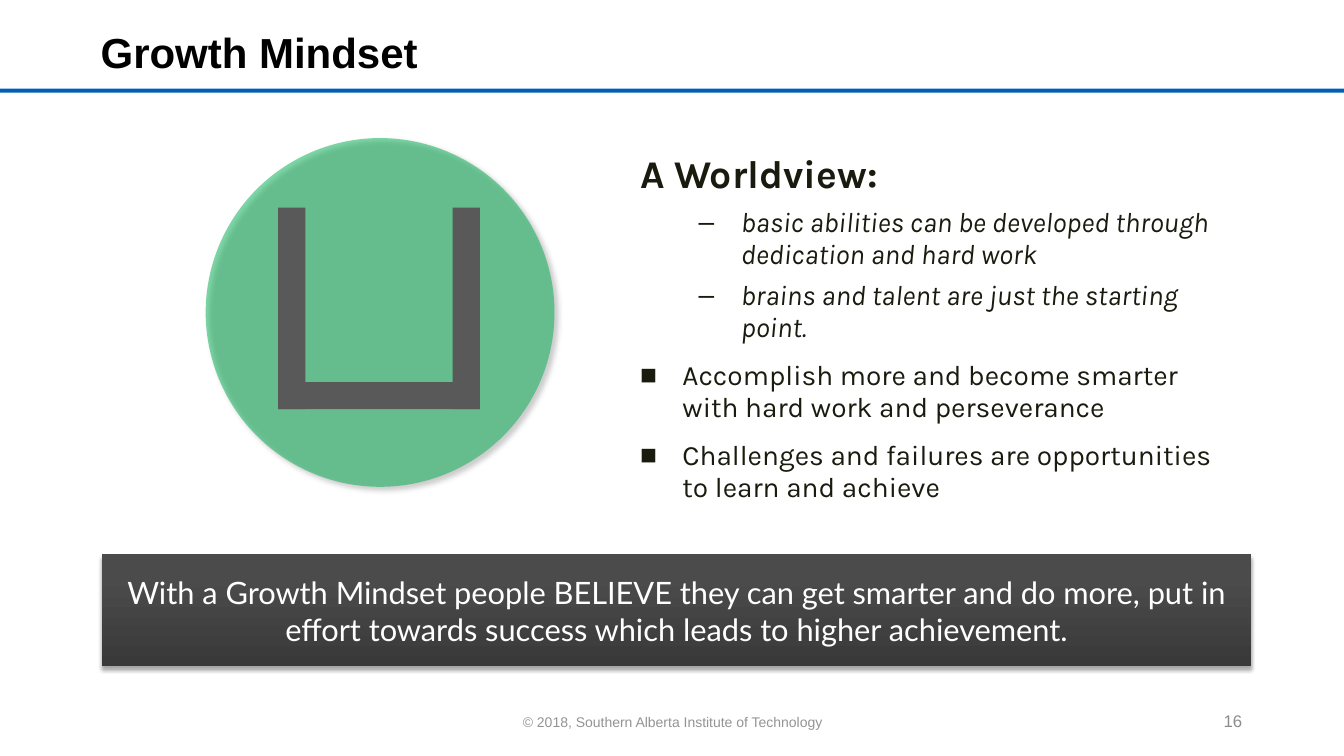
from lxml.etree import SubElement
from pptx import Presentation
from pptx.dml.color import RGBColor
from pptx.enum.shapes import MSO_SHAPE as Shape
from pptx.enum.text import MSO_ANCHOR as Anchor, PP_ALIGN as Align
from pptx.oxml.ns import qn
from pptx.util import Inches, Pt

BLACK = RGBColor(0x00, 0x00, 0x00)
WHITE = RGBColor(0xFF, 0xFF, 0xFF)
RULE_BLUE = RGBColor(0x00, 0x5E, 0xB8)
GREEN = RGBColor(0x00, 0xB0, 0x50)
INK = RGBColor(0x19, 0x1B, 0x0E)
BAR_GRAY = RGBColor(0x59, 0x59, 0x59)
BANNER_DARK = RGBColor(0x39, 0x39, 0x39)
BANNER_LIGHT = RGBColor(0x4B, 0x4B, 0x4B)
FOOTER_GRAY = RGBColor(0x94, 0x94, 0x94)
NUMBER_GRAY = RGBColor(0x8C, 0x8C, 0x8C)

INDENT = 0.42
# text, size, bold, italic, left margin, bullet, space before
WORLDVIEW = [
    ("A Worldview:", 28, True, False, 0, None, 0),
    ("basic abilities can be developed through dedication and hard work",
     20, False, True, 1, "–", 5),
    ("brains and talent are just the starting point.",
     20, False, True, 1, "–", 5),
    ("Accomplish more and become smarter with hard work and perseverance",
     20, False, False, INDENT, "■", 10),
    ("Challenges and failures are opportunities to learn and achieve",
     20, False, False, INDENT, "■", 10),
]


def set_font(paragraph, name, size, color, bold=False, italic=False):
    font = paragraph.font
    font.name, font.size = name, Pt(size)
    font.bold, font.italic = bold, italic
    font.color.rgb = color


def add_plain_shape(slide, kind, left, top, width, height, color=None):
    shape = slide.shapes.add_shape(
        kind, Inches(left), Inches(top), Inches(width), Inches(height))
    shape.shadow.inherit = False
    shape.line.fill.background()
    if color is not None:
        shape.fill.solid()
        shape.fill.fore_color.rgb = color
    return shape


def add_shadow(shape, opacity, blur, distance, angle):
    effects = shape._element.spPr.find(qn("a:effectLst"))
    shadow = SubElement(
        effects, qn("a:outerShdw"), blurRad=str(Pt(blur)),
        dist=str(Pt(distance)), dir=str(angle * 60000), rotWithShape="0")
    color = SubElement(shadow, qn("a:srgbClr"), val="000000")
    SubElement(color, qn("a:alpha"), val=str(opacity * 1000))


def add_text(slide, left, top, width, height, anchor=Anchor.TOP):
    box = slide.shapes.add_textbox(
        Inches(left), Inches(top), Inches(width), Inches(height))
    box.text_frame.word_wrap = True
    box.text_frame.vertical_anchor = anchor
    return box.text_frame


def add_line_of_text(slide, box, text, size, color, align, anchor, bold=False):
    paragraph = add_text(slide, *box, anchor).paragraphs[0]
    paragraph.text, paragraph.alignment = text, align
    set_font(paragraph, "Arial", size, color, bold)


def add_header(slide, left, top, width, height):
    add_plain_shape(slide, Shape.RECTANGLE, left, top + 0.88, width, 0.04,
                    RULE_BLUE)
    add_line_of_text(slide, (left + 0.9, top + 0.17, 9.77, height - 0.23),
                     "Growth Mindset", 30, BLACK, Align.LEFT, Anchor.MIDDLE,
                     bold=True)


def add_footer(slide, left, top, width, height):
    add_line_of_text(slide, (left, top + 0.08, 4.48, 0.27),
                     "© 2018, Southern Alberta Institute of Technology",
                     10, FOOTER_GRAY, Align.CENTER, Anchor.TOP)
    add_line_of_text(slide, (left + width - 3, top, 3, height),
                     "16", 12, NUMBER_GRAY, Align.RIGHT, Anchor.MIDDLE)


def add_open_container(slide, left, top, size):
    # Translucent disc
    disc = add_plain_shape(slide, Shape.OVAL, left, top, size, size, GREEN)
    color = disc._element.spPr.find(qn("a:solidFill")).find(qn("a:srgbClr"))
    SubElement(color, qn("a:alpha"), val="50000")
    add_shadow(disc, 40, 4, 3, 45)

    # Base and two sides, open at the top
    length, thick = 2, 0.27
    side_left, side_top = left + 0.72, top + 0.69
    add_plain_shape(slide, Shape.RECTANGLE, side_left,
                    side_top + length - thick, length, thick, BAR_GRAY)
    for offset in (0, length - thick):
        add_plain_shape(slide, Shape.RECTANGLE, side_left + offset, side_top,
                        thick, length, BAR_GRAY)


def add_worldview(slide, left, top, width, height):
    frame = add_text(slide, left, top, width, height)
    for i, (text, size, bold, italic, margin, bullet, before) in enumerate(WORLDVIEW):
        paragraph = frame.add_paragraph() if i else frame.paragraphs[0]
        paragraph.text = text
        if bullet:
            props = paragraph._p.get_or_add_pPr()
            props.set("marL", str(Inches(margin)))
            props.set("indent", str(Inches(-INDENT)))
            SubElement(props, qn("a:buFont"), typeface="Arial")
            SubElement(props, qn("a:buChar"), char=bullet)
        paragraph.level = 1 if bullet == "–" else 0
        paragraph.line_spacing = 0.94
        paragraph.space_before = Pt(before)
        paragraph.space_after = Pt(2)
        set_font(paragraph, "Karla", size, INK, bold, italic)


def add_banner(slide, left, top, width, height):
    banner = add_plain_shape(slide, Shape.RECTANGLE, left, top, width, height)
    banner.fill.gradient()
    banner.fill.gradient_angle = 90
    stops = ((0, BANNER_DARK), (0.8, BANNER_LIGHT))
    for stop, (position, color) in zip(banner.fill.gradient_stops, stops):
        stop.position = position
        stop.color.rgb = color
    add_shadow(banner, 35, 3.1, 1.8, 90)

    frame = banner.text_frame
    frame.word_wrap = True
    frame.vertical_anchor = Anchor.MIDDLE
    message = frame.paragraphs[0]
    message.text = ("With a Growth Mindset people BELIEVE they can get smarter "
                    "and do more, put in effort towards success which leads to "
                    "higher achievement.")
    message.alignment = Align.CENTER
    set_font(message, "Lato", 22, WHITE)


def main():
    deck = Presentation()
    deck.slide_width, deck.slide_height = Inches(13.33), Inches(7.5)
    slide = deck.slides.add_slide(deck.slide_layouts[6])
    add_header(slide, 0, 0, 13.33, 0.92)
    add_footer(slide, 4.43, 6.95, 7.99, 0.4)
    add_worldview(slide, 6.25, 1.47, 5.99, 3.48)
    add_open_container(slide, 2.04, 1.37, 3.46)
    add_banner(slide, 1.01, 5.5, 11.4, 1.11)
    deck.save("out.pptx")


if __name__ == "__main__":
    main()
